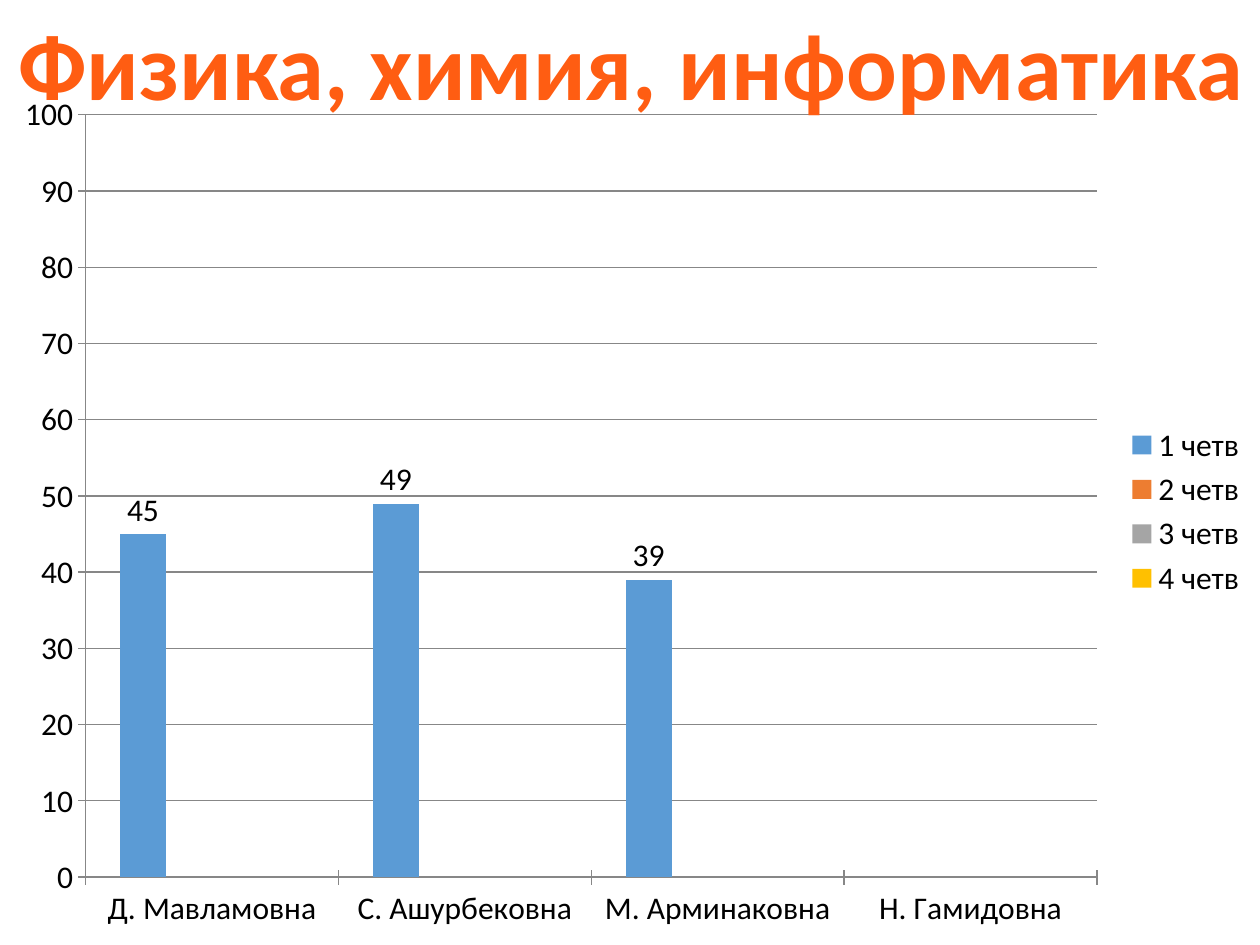
"""Builds a slide with a column chart of quarterly results in science subjects."""
from dataclasses import dataclass
from typing import Optional

import pptx
import pptx.chart.data
import pptx.dml.color
import pptx.enum.chart
import pptx.enum.text
import pptx.util


@dataclass(frozen=True)
class Theme:
    font: str = "Calibri"
    title: str = "FF5D12"
    text: str = "000000"
    axis: str = "878787"
    title_size: int = 54
    chart_size: int = 18


@dataclass(frozen=True)
class Quarter:
    name: str
    color: str
    values: tuple[Optional[int], ...] = (None,) * 4


THEME = Theme()
WIDTH, HEIGHT = pptx.util.Inches(10), pptx.util.Inches(7.5)
CHART_TOP = 0.083
TITLE_HEIGHT = 0.135
TEACHERS = ("Д. Мавламовна", "С. Ашурбековна", "М. Арминаковна", "Н. Гамидовна")
QUARTERS = (
    Quarter("1 четв", "5B9BD5", (45, 49, 39, None)),
    Quarter("2 четв", "ED7D31"),
    Quarter("3 четв", "A5A5A5"),
    Quarter("4 четв", "FFC000"),
)


def rgb(value: str) -> pptx.dml.color.RGBColor:
    return pptx.dml.color.RGBColor.from_string(value)


def style_font(font, *, size: int, color: str, bold: bool = False) -> None:
    font.name, font.size, font.bold = THEME.font, pptx.util.Pt(size), bold
    font.color.rgb = rgb(color)


def add_text(s, text: str, *, width: float, height: float, **style) -> None:
    sp = s.shapes.add_textbox(0, 0, int(WIDTH * width), int(HEIGHT * height))
    tf = sp.text_frame
    tf.word_wrap = False
    tf.auto_size = pptx.enum.text.MSO_AUTO_SIZE.SHAPE_TO_FIT_TEXT
    p = tf.paragraphs[0]
    p.alignment = pptx.enum.text.PP_ALIGN.CENTER
    r = p.add_run()
    r.text = text
    style_font(r.font, **style)


def style_line(line) -> None:
    line.color.rgb = rgb(THEME.axis)
    line.width = pptx.util.Pt(0.75)


def add_results_chart(s) -> None:
    data = pptx.chart.data.CategoryChartData()
    data.categories = TEACHERS
    for quarter in QUARTERS:
        data.add_series(quarter.name, quarter.values)
    top = int(HEIGHT * CHART_TOP)
    chart = s.shapes.add_chart(
        pptx.enum.chart.XL_CHART_TYPE.COLUMN_CLUSTERED,
        0, top, WIDTH, HEIGHT - top, data,
    ).chart
    chart.has_title = False
    style_font(chart.font, size=THEME.chart_size, color=THEME.text)
    chart.has_legend = True
    chart.legend.position = pptx.enum.chart.XL_LEGEND_POSITION.RIGHT
    chart.legend.include_in_layout = False

    for axis in (chart.category_axis, chart.value_axis):
        axis.major_tick_mark = pptx.enum.chart.XL_TICK_MARK.CROSS
        style_line(axis.format.line)
    axis = chart.value_axis
    axis.minimum_scale, axis.maximum_scale, axis.major_unit = 0, 100, 10
    axis.has_major_gridlines = True
    style_line(axis.major_gridlines.format.line)

    plot = chart.plots[0]
    plot.gap_width, plot.overlap, plot.vary_by_categories = 150, 0, False
    for series, quarter in zip(plot.series, QUARTERS):
        series.invert_if_negative = False
        series.format.fill.solid()
        series.format.fill.fore_color.rgb = rgb(quarter.color)
        series.data_labels.show_value = True


def main() -> None:
    prs = pptx.Presentation()
    prs.slide_width, prs.slide_height = WIDTH, HEIGHT
    s = prs.slides.add_slide(prs.slide_layouts[6])
    add_results_chart(s)
    add_text(s, "Физика, химия, информатика", width=1.002, height=TITLE_HEIGHT,
             size=THEME.title_size, color=THEME.title, bold=True)
    prs.save("out.pptx")


if __name__ == "__main__":
    main()
